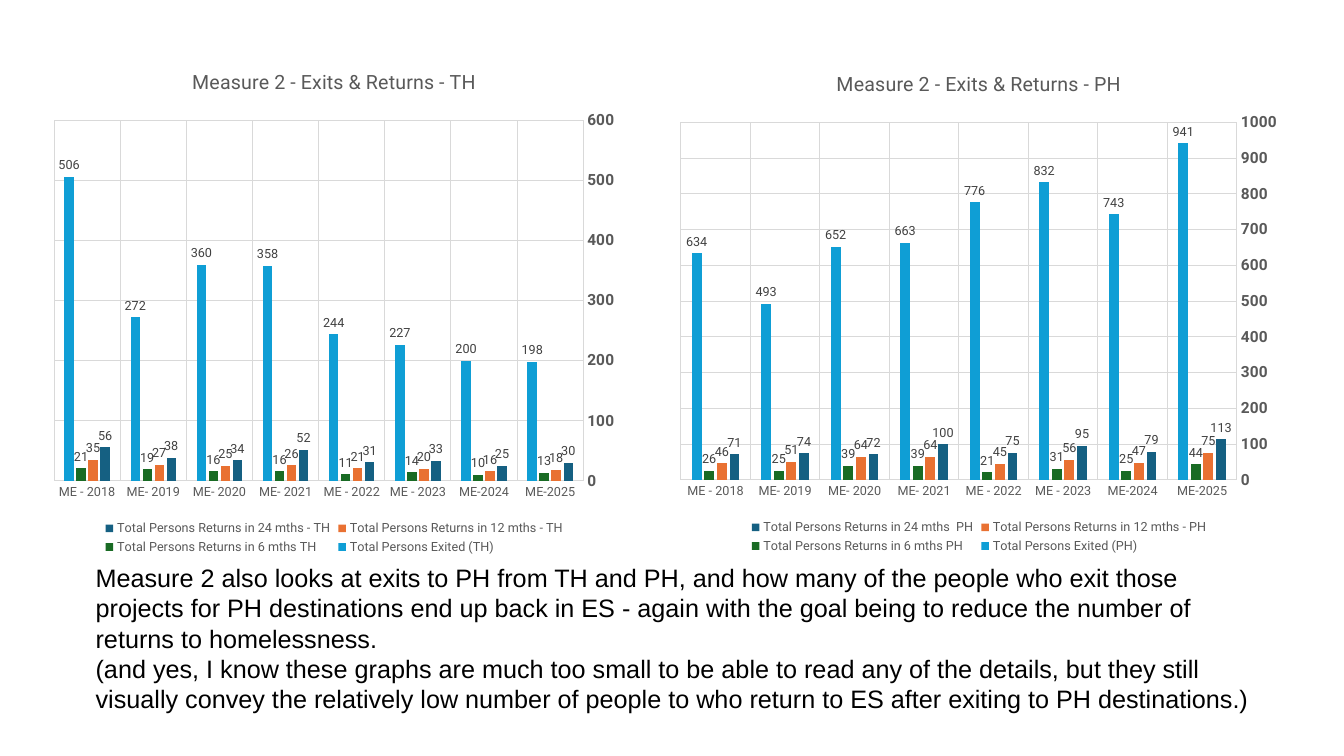
from pptx import Presentation
from pptx import util as u
from pptx.chart.data import CategoryChartData
from pptx.dml.color import RGBColor
from pptx.enum import chart as ch

# Content
YEARS = ["ME-2025", "ME-2024", "ME - 2023", "ME - 2022",
         "ME- 2021", "ME- 2020", "ME- 2019", "ME - 2018"]
MEASURES = [
    {
        "title": "Measure 2 - Exits & Returns - TH",
        "box": (42, 49, 579, 505),
        "scale": (600, 100),
        "series": [
            ("Total Persons Returns in 24 mths - TH", (30, 25, 33, 31, 52, 34, 38, 56)),
            ("Total Persons Returns in 12 mths - TH", (18, 16, 20, 21, 26, 25, 27, 35)),
            ("Total Persons Returns in 6 mths TH", (13, 10, 14, 11, 16, 16, 19, 21)),
            ("Total Persons Exited (TH)", (198, 200, 227, 244, 358, 360, 272, 506)),
        ],
    },
    {
        "title": "Measure 2 - Exits & Returns - PH",
        "box": (663, 51, 616, 502),
        "scale": (1000, 100),
        "series": [
            ("Total Persons Returns in 24 mths  PH", (113, 79, 95, 75, 100, 72, 74, 71)),
            ("Total Persons Returns in 12 mths - PH", (75, 47, 56, 45, 64, 64, 51, 46)),
            ("Total Persons Returns in 6 mths PH", (44, 25, 31, 21, 39, 39, 25, 26)),
            ("Total Persons Exited (PH)", (941, 743, 832, 776, 663, 652, 493, 634)),
        ],
    },
]
COMMENTARY = [
    "Measure 2 also looks at exits to PH from TH and PH, and how many of the people "
    "who exit those projects for PH destinations end up back in ES - again with the "
    "goal being to reduce the number of returns to homelessness.",
    "(and yes, I know these graphs are much too small to be able to read any of the "
    "details, but they still visually convey the relatively low number of people to "
    "who return to ES after exiting to PH destinations.)",
]
COMMENTARY_BOX = (85, 553, 1168, 162)

BLACK = RGBColor(0x00, 0x00, 0x00)
GRAY = RGBColor(0x59, 0x59, 0x59)
DARK_GRAY = RGBColor(0x40, 0x40, 0x40)
GRID = RGBColor(0xD9, 0xD9, 0xD9)
SERIES_COLORS = [RGBColor(0x15, 0x60, 0x82), RGBColor(0xE9, 0x71, 0x32),
                 RGBColor(0x19, 0x6B, 0x24), RGBColor(0x0F, 0x9E, 0xD5)]
PX = 9144  # 100 px to the inch


def emu(box):
    return [length * PX for length in box]


def style_font(font, size, color, name="Roboto", bold=False):
    font.size = u.Pt(size)
    font.name = name
    font.bold = bold
    font.color.rgb = color


def style_line(line):
    line.color.rgb = GRID
    line.width = u.Pt(0.75)


def style_axis(axis, size, bold=False):
    axis.major_tick_mark = axis.minor_tick_mark = ch.XL_TICK_MARK.NONE
    axis.has_major_gridlines = True
    style_line(axis.major_gridlines.format.line)
    style_font(axis.tick_labels.font, size, GRAY, bold=bold)


def add_measure(slide, measure):
    data = CategoryChartData()
    data.categories = YEARS
    for name, counts in measure["series"]:
        data.add_series(name, counts)
    chart = slide.shapes.add_chart(
        ch.XL_CHART_TYPE.COLUMN_CLUSTERED, *emu(measure["box"]), data).chart
    style_font(chart.font, 10, BLACK)

    # Title and legend
    chart.has_title = True
    heading = chart.chart_title.text_frame.paragraphs[0].add_run()
    heading.text = measure["title"]
    style_font(heading.font, 14, GRAY)
    chart.chart_title.include_in_layout = False
    chart.has_legend = True
    chart.legend.position = ch.XL_LEGEND_POSITION.BOTTOM
    chart.legend.include_in_layout = False
    style_font(chart.legend.font, 9, GRAY)

    # Axes: years run right to left, so counts stand on the right
    years, counts = chart.category_axis, chart.value_axis
    style_axis(years, 9)
    style_line(years.format.line)
    years.reverse_order = True
    style_axis(counts, 11, bold=True)
    counts.format.line.fill.background()
    counts.minimum_scale = 0
    counts.maximum_scale, counts.major_unit = measure["scale"]

    # Columns
    plot = chart.plots[0]
    plot.gap_width, plot.overlap = 219, -27
    plot.vary_by_categories = False
    for series, color in zip(plot.series, SERIES_COLORS):
        series.format.fill.solid()
        series.format.fill.fore_color.rgb = color
        series.invert_if_negative = False
        labels = series.data_labels
        labels.show_value = True
        labels.position = ch.XL_LABEL_POSITION.OUTSIDE_END
        style_font(labels.font, 9, DARK_GRAY)


def add_commentary(slide):
    frame = slide.shapes.add_textbox(*emu(COMMENTARY_BOX)).text_frame
    frame.word_wrap = True
    for i, sentence in enumerate(COMMENTARY):
        paragraph = frame.paragraphs[0] if i == 0 else frame.add_paragraph()
        run = paragraph.add_run()
        run.text = sentence
        style_font(run.font, 18, BLACK, "Arial")


def main():
    deck = Presentation()
    deck.slide_width, deck.slide_height = emu((1333, 750))
    slide = deck.slides.add_slide(deck.slide_layouts[6])
    for measure in MEASURES:
        add_measure(slide, measure)
    add_commentary(slide)
    deck.save("out.pptx")


if __name__ == "__main__":
    main()
